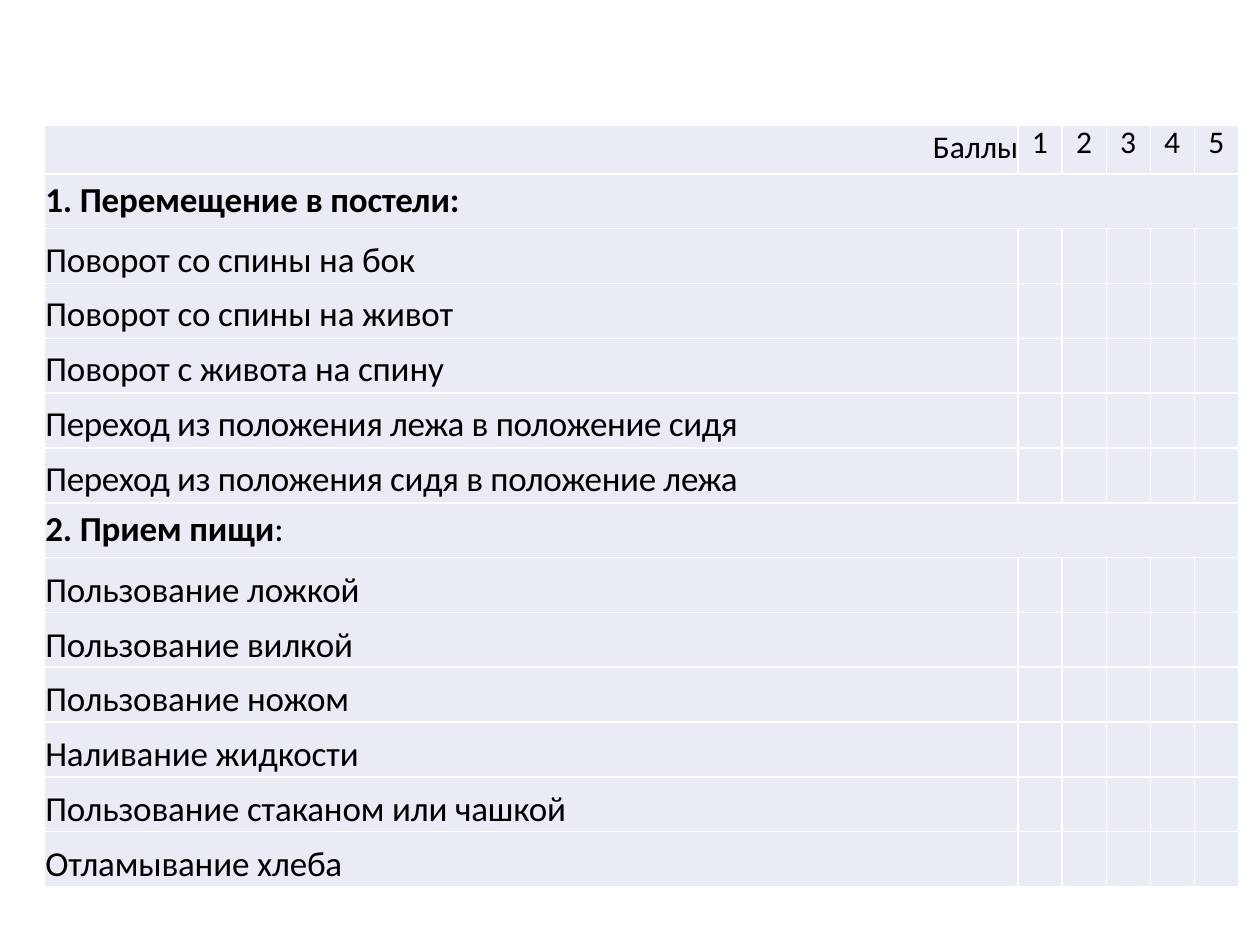
from dataclasses import dataclass

from pptx import Presentation
from pptx.dml.color import RGBColor
from pptx.enum.text import PP_ALIGN
from pptx.oxml import parse_xml
from pptx.oxml.ns import nsdecls
from pptx.util import Inches, Pt

RIGHT = PP_ALIGN.RIGHT


@dataclass
class Theme:
    font: str = "Calibri"
    text: str = "000000"
    fill: str = "E9ECF4"
    border: str = "FFFFFF"
    header_size: int = 18
    body_size: int = 20


theme = Theme()


def style_cell(cell):
    cell.fill.solid()
    cell.fill.fore_color.rgb = RGBColor.from_string(theme.fill)
    tcPr = cell._tc.get_or_add_tcPr()
    for i, side in enumerate(("lnL", "lnR", "lnT", "lnB")):
        tcPr.insert(i, parse_xml(
            f'<a:{side} {nsdecls("a")} w="{Pt(1)}"><a:solidFill>'
            f'<a:srgbClr val="{theme.border}"/></a:solidFill></a:{side}>'))


def write_cell(cell, runs, size, top=0, indent=0, before=0, spc=-10):
    cell.margin_left = cell.margin_right = cell.margin_bottom = 0
    cell.margin_top = Inches(top)
    p = cell.text_frame.paragraphs[0]
    p.space_before = Pt(before)
    p._p.get_or_add_pPr().set("marL", str(Inches(indent)))
    for text, bold in runs:
        r = p.add_run()
        r.text = text
        r.font.name = theme.font
        r.font.size = Pt(size)
        r.font.bold = bold
        r.font.color.rgb = RGBColor.from_string(theme.text)
        r._r.get_or_add_rPr().set("spc", str(spc))
    return p


sections = [
    ([("1. Перемещение в постели:", True)], 0.08, [
        "Поворот со спины на бок",
        "Поворот со спины на живот",
        "Поворот с живота на спину",
        "Переход из положения лежа в положение сидя",
        "Переход из положения сидя в положение лежа",
    ]),
    ([("2. Прием пищи", True), (":", False)], 0.09, [
        "Пользование ложкой",
        "Пользование вилкой",
        "Пользование ножом",
        "Наливание жидкости",
        "Пользование стаканом или чашкой",
        "Отламывание хлеба",
    ]),
]
scores = range(1, 6)
n_rows = 1 + sum(1 + len(items) for _, _, items in sections)
n_cols = 1 + len(scores)
header_height = Inches(0.39)
table_height = Inches(6.05)

prs = Presentation()
prs.slide_width, prs.slide_height = Inches(10), Inches(7.5)
s = prs.slides.add_slide(prs.slide_layouts[6])

table = s.shapes.add_table(n_rows, n_cols, Inches(0.35), Inches(0.99),
                           Inches(9.48), table_height).table
table.first_row = table.horz_banding = False
for i, col in enumerate(table.columns):
    col.width = Inches(0.35 if i else 7.73)
for i, row in enumerate(table.rows):
    row.height = (table_height - header_height) // (n_rows - 1) if i else header_height
    for cell in row.cells:
        style_cell(cell)

p = write_cell(table.cell(0, 0), [("Баллы", False)], theme.header_size, top=0.03, before=2.5, spc=0)
p.alignment = RIGHT
for score in scores:
    p = write_cell(table.cell(0, score), [(str(score), False)], theme.header_size, indent=0.11, spc=0)
    p.line_spacing = Pt(21.4)

row = 1
for heading, top, items in sections:
    table.cell(row, 0).merge(table.cell(row, n_cols - 1))
    write_cell(table.cell(row, 0), heading, theme.body_size, top=0.04, indent=0.01, before=2.8)
    for item in items:
        row += 1
        spc = -20 if item.startswith("Переход") else -10
        write_cell(table.cell(row, 0), [(item, False)], theme.body_size,
                   top=top, indent=0.01, before=6, spc=spc)
    row += 1

prs.save("out.pptx")
